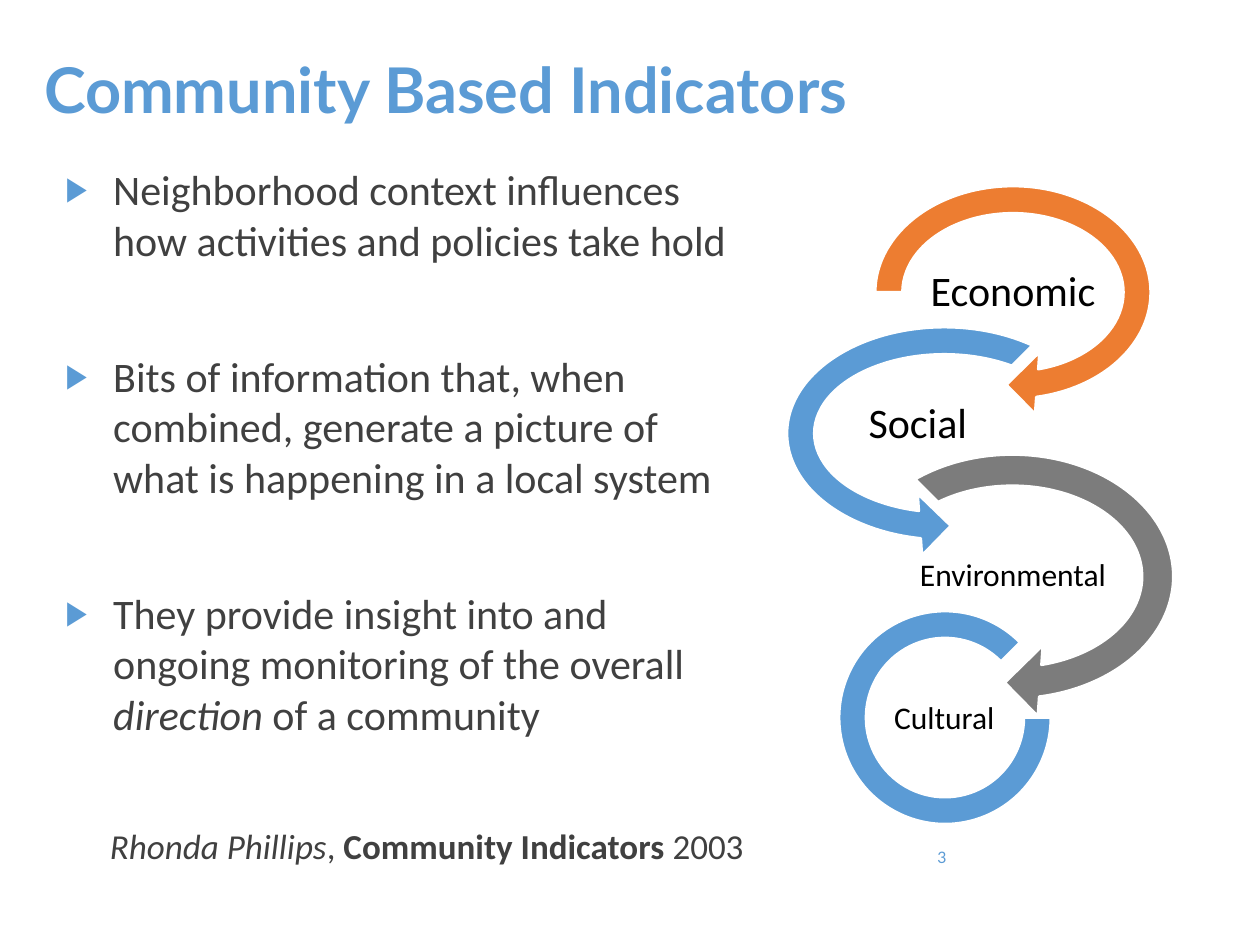
"""Build the Community Based Indicators slide."""
from lxml import etree
from pptx import Presentation
from pptx import util as u
from pptx.dml.color import RGBColor
from pptx.enum import shapes, text
from pptx.oxml.ns import qn

PX = 9144
BLUE = RGBColor(0x5B, 0x9B, 0xD5)
ORANGE = RGBColor(0xED, 0x7D, 0x31)
GRAY = RGBColor(0x7C, 0x7C, 0x7C)
DARK = RGBColor(0x40, 0x40, 0x40)
BLACK = RGBColor(0, 0, 0)
WHITE = RGBColor(0xFF, 0xFF, 0xFF)
HEAD_FONT, BODY_FONT = "Lato", "Calibri"
SHAPE = shapes.MSO_SHAPE
ALIGN = text.PP_ALIGN

POINTS = [
    [("Neighborhood context influences how activities and policies take hold", "")],
    [("Bits of information that, when combined, generate a picture of "
      "what is happening in a local system", "")],
    [("They provide insight into and ongoing monitoring of the overall ", ""),
     ("direction", "i"), (" of a community", "")],
]
SOURCE = [("Rhonda Phillips", "i"), (", ", ""), ("Community Indicators ", "b"), ("2003", "")]
ARCS = [
    (SHAPE.CIRCULAR_ARROW, (681, 134, 246, 196), (0.11, 11.423, 45, 108, 0.125), ORANGE,
     "Economic", (728, 205, 152, 55), 24),
    (SHAPE.LEFT_CIRCULAR_ARROW, (611, 246, 277, 196), (0.11, 11.423, 63, 189, 0.125), BLUE,
     "Social", (645, 297, 167, 81), 24),
    (SHAPE.CIRCULAR_ARROW, (660, 345, 287, 225), (0.11, 11.423, 45, 135, 0.125), GRAY,
     "Environmental", (722, 427, 164, 61), 18),
    (SHAPE.BLOCK_ARC, (666, 485, 168, 169), (0, 189, 0.127), BLUE,
     "Cultural", (695, 543, 109, 55), 18),
]


class SlideBuilder:
    """Hold the slide style and add each kind of element."""

    def __init__(self, deck):
        self.page = deck.slides.add_slide(deck.slide_layouts[5])

    def emu(self, bounds):
        return [u.Emu(value * PX) for value in bounds]

    def style(self, span, size, color, font, marks=""):
        span.font.size = u.Pt(size)
        span.font.name = font
        span.font.color.rgb = color
        span.font.bold = "b" in marks
        span.font.italic = "i" in marks

    def title(self, bounds, words):
        box = self.page.shapes.title
        box.left, box.top, box.width, box.height = self.emu(bounds)
        frame = box.text_frame
        frame.text = words
        frame.auto_size = text.MSO_AUTO_SIZE.NONE
        frame.vertical_anchor = text.MSO_ANCHOR.MIDDLE
        para = frame.paragraphs[0]
        para.alignment = ALIGN.LEFT
        self.style(para.runs[0], 36, BLUE, HEAD_FONT, "b")

    def frame(self, bounds):
        frame = self.page.shapes.add_textbox(*self.emu(bounds)).text_frame
        frame.word_wrap = True
        return frame

    def label(self, bounds, words, size, color=BLACK, font=BODY_FONT, align=ALIGN.CENTER, inset=1):
        frame = self.frame(bounds)
        frame.margin_left = frame.margin_right = u.Emu(inset * PX)
        frame.margin_top = frame.margin_bottom = u.Emu(inset * PX)
        frame.vertical_anchor = text.MSO_ANCHOR.MIDDLE
        frame.text = words
        para = frame.paragraphs[0]
        para.alignment = align
        para.line_spacing = 0.9
        self.style(para.runs[0], size, color, font)

    def spans(self, para, parts, size):
        for words, marks in parts:
            span = para.add_run()
            span.text = words
            self.style(span, size, DARK, BODY_FONT, marks)

    def bullet(self, para):
        props = para._p.get_or_add_pPr()
        props.set("marL", str(38 * PX))
        props.set("indent", str(-38 * PX))
        color = etree.SubElement(props, qn("a:buClr"))
        etree.SubElement(color, qn("a:srgbClr"), val=str(BLUE))
        etree.SubElement(props, qn("a:buSzPct"), val="80000")
        etree.SubElement(props, qn("a:buFont"), typeface="Arial")
        etree.SubElement(props, qn("a:buChar"), char="▶")

    def body(self, bounds, points, source):
        frame = self.frame(bounds)
        for index, parts in enumerate(points):
            para = frame.add_paragraph() if index else frame.paragraphs[0]
            para.space_before = u.Pt(49 if index else 0)
            self.bullet(para)
            self.spans(para, parts, 24)
        para = frame.add_paragraph()
        para.space_before = u.Pt(49)
        para.alignment = ALIGN.RIGHT
        self.spans(para, source, 20)

    def arc(self, kind, bounds, adjustments, color):
        shape = self.page.shapes.add_shape(kind, *self.emu(bounds))
        for index, value in enumerate(adjustments):
            shape.adjustments[index] = value
        shape.shadow.inherit = False
        shape.fill.solid()
        shape.fill.fore_color.rgb = color
        shape.line.color.rgb = WHITE
        shape.line.width = u.Pt(1.5)


def main():
    deck = Presentation()
    deck.slide_width, deck.slide_height = u.Emu(1000 * PX), u.Emu(750 * PX)
    builder = SlideBuilder(deck)
    builder.title((25, 33, 850, 75), "Community Based Indicators")
    builder.body((42, 125, 558, 592), POINTS, SOURCE)
    builder.label((705, 661, 56, 40), "3", 9, BLUE, HEAD_FONT, ALIGN.RIGHT, 10)
    for kind, bounds, adjustments, color, words, label_bounds, size in ARCS:
        builder.arc(kind, bounds, adjustments, color)
        builder.label(label_bounds, words, size)
    deck.save("out.pptx")


if __name__ == "__main__":
    main()
